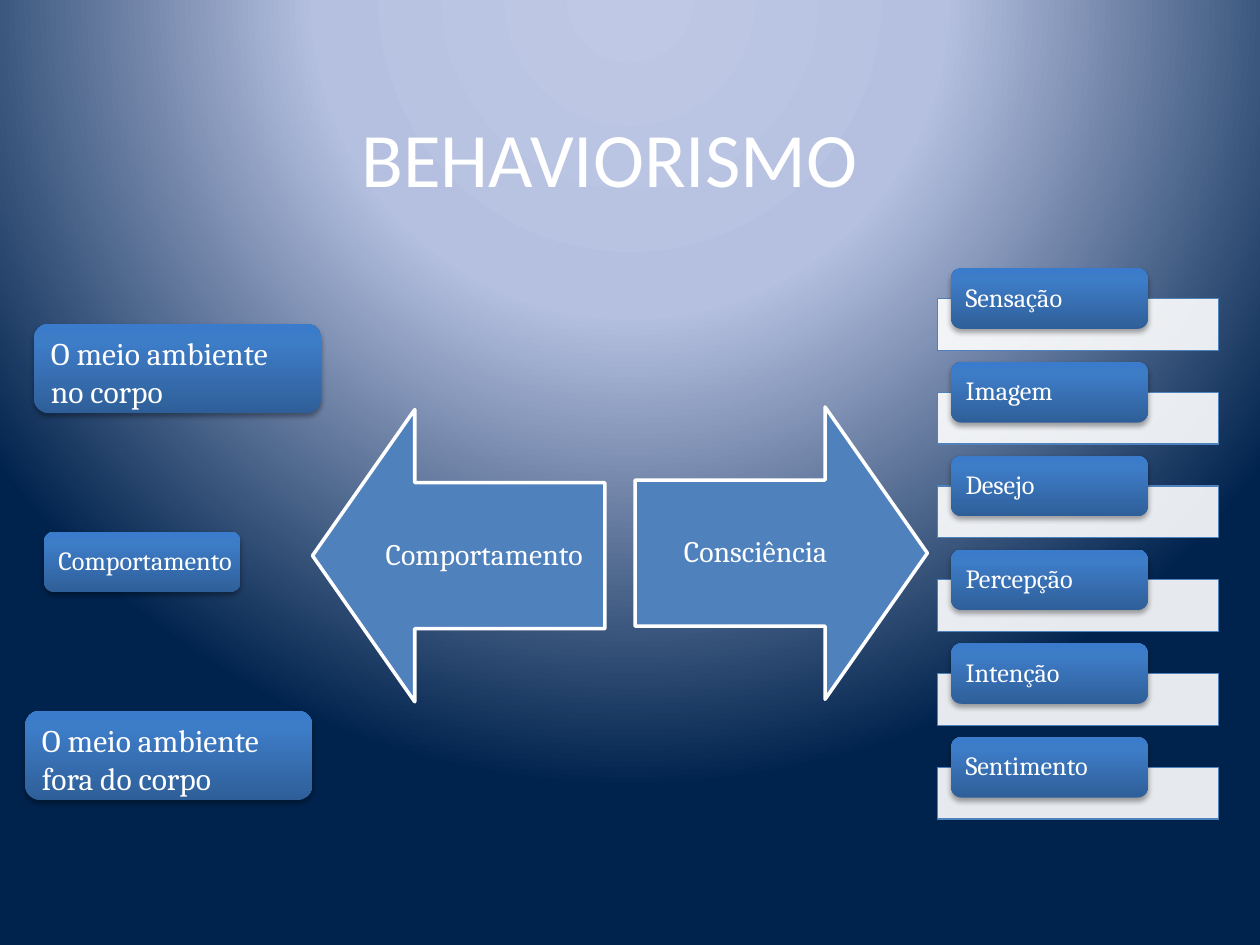
from lxml import etree
from pptx import Presentation
from pptx.dml.color import RGBColor
from pptx.enum.shapes import MSO_SHAPE
from pptx.enum.text import MSO_ANCHOR, PP_ALIGN
from pptx.oxml import parse_xml
from pptx.oxml.ns import nsdecls, qn
from pptx.util import Inches, Pt

RECTANGLE, ROUNDED = MSO_SHAPE.RECTANGLE, MSO_SHAPE.ROUNDED_RECTANGLE
LEFT_ARROW, RIGHT_ARROW = MSO_SHAPE.LEFT_ARROW, MSO_SHAPE.RIGHT_ARROW
LEFT, CENTER = PP_ALIGN.LEFT, PP_ALIGN.CENTER
TOP, MIDDLE = MSO_ANCHOR.TOP, MSO_ANCHOR.MIDDLE

WHITE = RGBColor(0xFF, 0xFF, 0xFF)
BLUE = RGBColor(0x4F, 0x81, 0xBD)
BLACK = RGBColor(0x00, 0x00, 0x00)
GLOW = [
    (0, RGBColor(0xBF, 0xC9, 0xE5)),
    (40, RGBColor(0xB5, 0xC0, 0xE0)),
    (100, RGBColor(0x00, 0x23, 0x4D)),
]
GLOSS = [
    (0, RGBColor(0x2F, 0x5F, 0x99)),
    (80, RGBColor(0x3D, 0x7C, 0xC7)),
    (100, RGBColor(0x3A, 0x7C, 0xCB)),
]
RADIAL = '<a:path path="circle"><a:fillToRect l="50000" t="-80000" r="50000" b="180000"/></a:path>'
UPWARD = '<a:lin ang="16200000" scaled="0"/>'
PROCESSES = ["Sensação", "Imagem", "Desejo", "Percepção", "Intenção", "Sentimento"]
PILL_SIZE = (1.56, 0.48)
PILL_INSETS = (0.09, 0.02, 0.03, 0.02)


def set_gradient(fill, owner, stops, direction):
    """Give the owner of a fill a gradient with the stops and direction."""
    fill.solid()
    stop_list = "".join(
        f'<a:gs pos="{place * 1000}"><a:srgbClr val="{color}"/></a:gs>' for place, color in stops
    )
    gradient = parse_xml(
        f'<a:gradFill {nsdecls("a")} rotWithShape="1"><a:gsLst>{stop_list}</a:gsLst>{direction}</a:gradFill>'
    )
    solid = owner.find(qn("a:solidFill"))
    owner.replace(solid, gradient)


def add_shadow(shape):
    """Put a soft shadow just below a shape."""
    effects = shape._element.spPr.find(qn("a:effectLst"))
    effects.append(parse_xml(
        f'<a:outerShdw {nsdecls("a")} blurRad="{Pt(3.1)}" dist="{Pt(1.8)}" dir="5400000" rotWithShape="0">'
        f'<a:srgbClr val="{BLACK}"><a:alpha val="35000"/></a:srgbClr></a:outerShdw>'
    ))


def write_text(shape, text, size, font="Cambria", align=LEFT, anchor=MIDDLE,
               insets=(0.1, 0.05, 0.1, 0.05), spacing=None):
    """Write one formatted paragraph in a shape."""
    frame = shape.text_frame
    frame.word_wrap = True
    frame.vertical_anchor = anchor
    frame.margin_left, frame.margin_top, frame.margin_right, frame.margin_bottom = map(Inches, insets)
    para = frame.paragraphs[0]
    para.alignment = align
    para.line_spacing = spacing
    span = para.add_run()
    span.text = text
    span.font.name = font
    span.font.size = Pt(size)
    span.font.color.rgb = WHITE


def add_block(page, kind, box):
    """Add a preset shape without shadow in a box of inches."""
    shape = page.shapes.add_shape(kind, *map(Inches, box))
    shape.shadow.inherit = False
    return shape


def add_glossy_box(page, box, text, size, **text_format):
    """Add a glossy rounded box with its text."""
    shape = add_block(page, ROUNDED, box)
    set_gradient(shape.fill, shape._element.spPr, GLOSS, UPWARD)
    shape.line.fill.background()
    add_shadow(shape)
    write_text(shape, text, size, **text_format)


def add_pill(page, left, top, text):
    """Add a small glossy label."""
    add_glossy_box(page, (left, top, *PILL_SIZE), text, 15, insets=PILL_INSETS, spacing=0.9)


def add_arrow(page, kind, box, text):
    """Add a block arrow with its text."""
    arrow = add_block(page, kind, box)
    arrow.adjustments[0] = 0.5
    arrow.adjustments[1] = 0.35
    arrow.fill.solid()
    arrow.fill.fore_color.rgb = BLUE
    arrow.line.color.rgb = WHITE
    arrow.line.width = Pt(2)
    write_text(arrow, text, 17, align=CENTER, insets=(0.13,) * 4, spacing=0.9)


def add_process_list(page, box):
    """Stack a labelled bar for each mental process in the box."""
    left, top, width, height = box
    bar_height, bar_drop = 0.41, 0.24
    step = (height - bar_drop - bar_height) / (len(PROCESSES) - 1)
    for index, process in enumerate(PROCESSES):
        row_top = top + index * step
        bar = add_block(page, RECTANGLE, (left, row_top + bar_drop, width, bar_height))
        bar.fill.solid()
        bar.fill.fore_color.rgb = WHITE
        color = bar._element.spPr.find(qn("a:solidFill"))[0]
        etree.SubElement(color, qn("a:alpha"), val="90000")
        bar.line.color.rgb = BLUE
        bar.line.width = Pt(0.75)
        add_pill(page, left + 0.11, row_top, process)


def add_title(page, box, text):
    """Move the title placeholder to the box and write it."""
    title = page.shapes.title
    title.left, title.top, title.width, title.height = map(Inches, box)
    write_text(title, text, 44, font="Calibri", align=CENTER)


def add_environment(page):
    """Place the boxes that the behaviour arrow points to."""
    add_glossy_box(page, (0.27, 2.57, 2.28, 0.71), "O meio ambiente no corpo", 18, anchor=TOP)
    add_pill(page, 0.35, 4.22, "Comportamento")
    add_glossy_box(page, (0.2, 5.64, 2.28, 0.71), "O meio ambiente fora do corpo", 18, anchor=TOP)


def main():
    """Build the slide and save it."""
    deck = Presentation()
    deck.slide_width, deck.slide_height = Inches(10), Inches(7.5)
    page = deck.slides.add_slide(deck.slide_layouts[0])
    subtitle = page.placeholders[1]._element
    subtitle.getparent().remove(subtitle)
    backdrop = page.background.fill
    backdrop.solid()
    set_gradient(backdrop, page._element.find(".//" + qn("p:bgPr")), GLOW, RADIAL)
    add_title(page, (0.59, 0.44, 8.5, 1.61), "BEHAVIORISMO")
    add_arrow(page, LEFT_ARROW, (2.48, 3.25, 2.32, 2.32), "Comportamento")
    add_arrow(page, RIGHT_ARROW, (5.04, 3.23, 2.32, 2.32), "Consciência")
    add_process_list(page, (7.44, 2.13, 2.23, 4.37))
    add_environment(page)
    deck.save("out.pptx")


if __name__ == "__main__":
    main()
